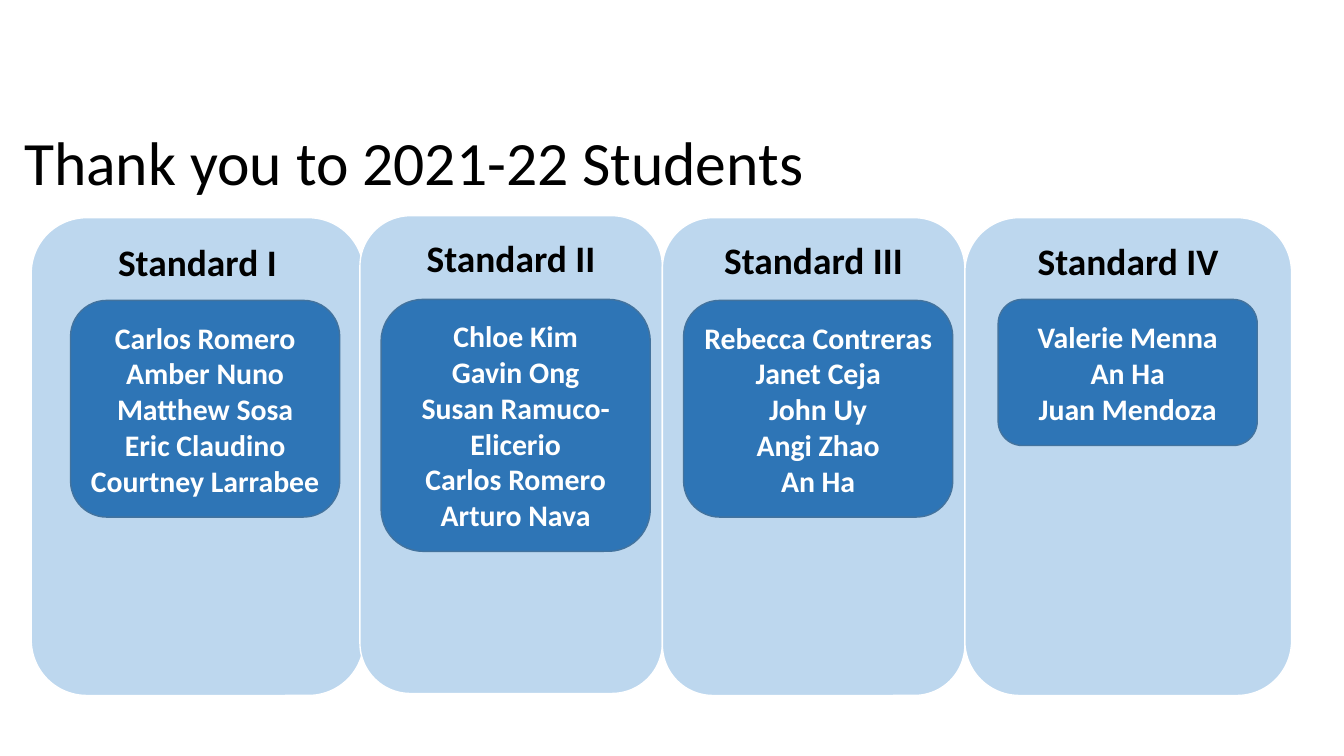
from pptx import Presentation
from pptx.dml.color import RGBColor
from pptx.enum.shapes import MSO_SHAPE as SHAPE
from pptx.enum.text import MSO_ANCHOR as ANCHOR, PP_ALIGN as ALIGN
from pptx.util import Emu, Pt

EMU_PER_PX = 9144  # 100 px to the inch


def px(n):
    return Emu(n * EMU_PER_PX)


def color(hex_code):
    return RGBColor.from_string(hex_code)


class SlideBuilder:
    FONT = "Calibri"
    BLACK, WHITE = "000000", "FFFFFF"
    PANEL, CARD, CARD_EDGE = "BDD7EE", "2E75B6", "43739E"

    def __init__(self, prs):
        self.slide = prs.slides.add_slide(prs.slide_layouts[6])

    def set_text(self, tf, text, size, hex_code, bold, align, anchor):
        tf.word_wrap = True
        tf.vertical_anchor = anchor
        tf.text = text
        for p in tf.paragraphs:
            p.alignment = align
            for r in p.runs:
                r.font.name = self.FONT
                r.font.size = Pt(size)
                r.font.bold = bold
                r.font.color.rgb = color(hex_code)

    def rounded(self, box, fill, edge):
        sp = self.slide.shapes.add_shape(SHAPE.ROUNDED_RECTANGLE, *map(px, box))
        sp.shadow.inherit = False
        sp.fill.solid()
        sp.fill.fore_color.rgb = color(fill)
        sp.line.color.rgb = color(edge)
        sp.line.width = Pt(1)
        return sp.text_frame

    def panel(self, box, heading):
        tf = self.rounded(box, self.PANEL, self.WHITE)
        self.set_text(tf, heading, 26.7, self.BLACK, True,
                      ALIGN.CENTER, ANCHOR.TOP)

    def card(self, box, names):
        tf = self.rounded(box, self.CARD, self.CARD_EDGE)
        tf.margin_left = tf.margin_top = tf.margin_right = tf.margin_bottom = 0
        self.set_text(tf, "\n".join(names), 21.3, self.WHITE, True,
                      ALIGN.CENTER, ANCHOR.MIDDLE)

    def title(self, box, text):
        tf = self.slide.shapes.add_textbox(*map(px, box)).text_frame
        self.set_text(tf, text, 44, self.BLACK, False, ALIGN.LEFT, ANCHOR.MIDDLE)
        tf.paragraphs[0].line_spacing = 0.9


PANEL_HEIGHT = 474

# heading, panel (left, top, width), card box, names
STANDARDS = [
    ("Standard I", (31, 216, 330), (70, 298, 267, 215),
     ["Carlos Romero", "Amber Nuno", "Matthew Sosa", "Eric Claudino",
      "Courtney Larrabee"]),
    ("Standard II", (357, 214, 300), (378, 297, 267, 250),
     ["Chloe Kim", "Gavin Ong", "Susan Ramuco-Elicerio", "Carlos Romero",
      "Arturo Nava"]),
    ("Standard III", (657, 216, 300), (678, 298, 267, 215),
     ["Rebecca Contreras", "Janet Ceja", "John Uy", "Angi Zhao", "An Ha"]),
    ("Standard IV", (957, 216, 324), (990, 297, 257, 145),
     ["Valerie Menna", "An Ha", "Juan Mendoza"]),
]


def main():
    prs = Presentation()
    prs.slide_width, prs.slide_height = px(1333), px(750)
    s = SlideBuilder(prs)
    for heading, panel, card, names in STANDARDS:
        s.panel((*panel, PANEL_HEIGHT), heading)
        s.card(card, names)
    s.title((14, 92, 1150, 145), "Thank you to 2021-22 Students")
    prs.save("out.pptx")


if __name__ == "__main__":
    main()
